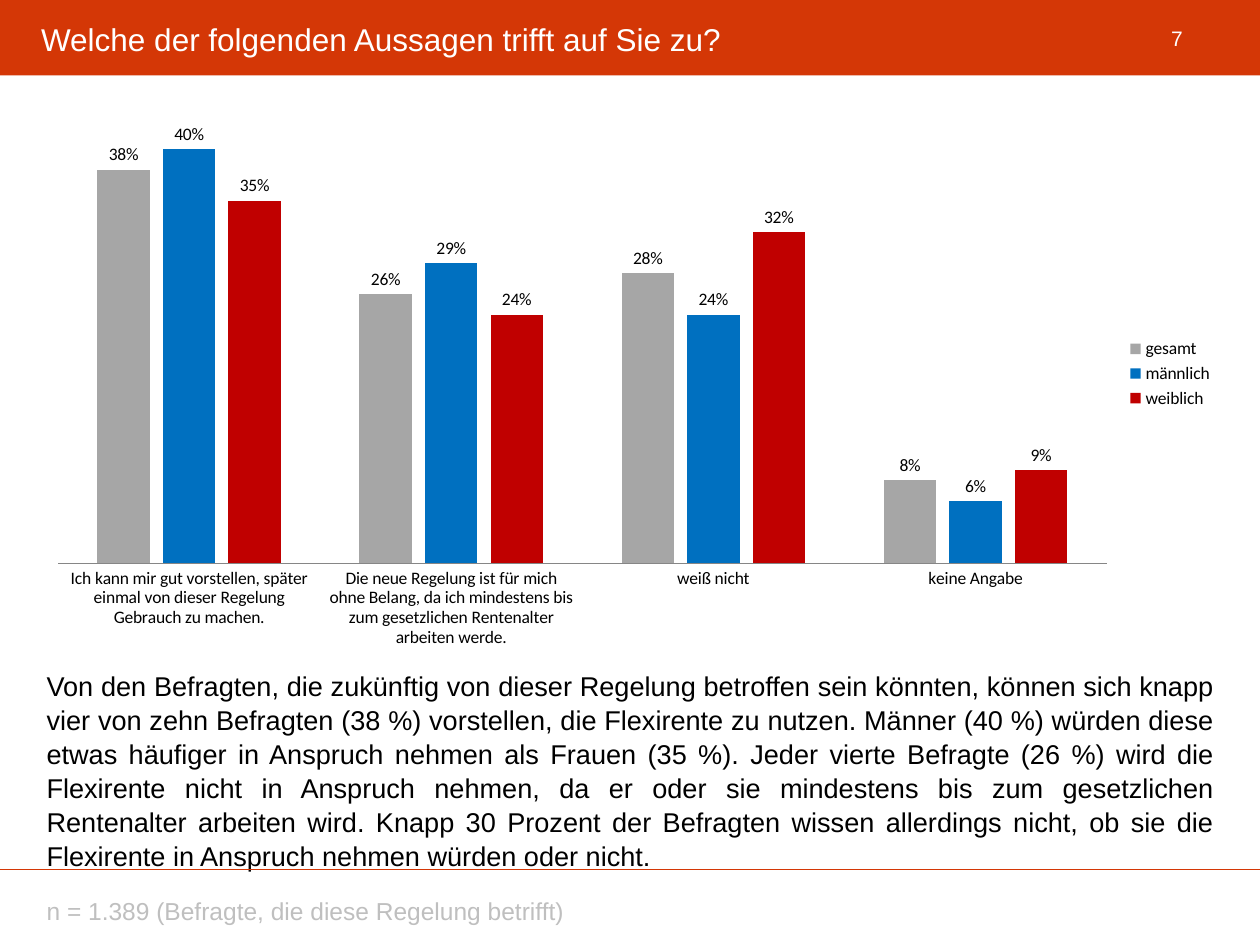
from lxml import etree
from pptx import Presentation
from pptx.chart.data import CategoryChartData
from pptx.dml.color import RGBColor
from pptx.enum.chart import XL_CHART_TYPE as ChartType, XL_LABEL_POSITION as LabelPos
from pptx.enum.chart import XL_LEGEND_POSITION as LegendPos, XL_TICK_MARK as TickMark
from pptx.enum.shapes import MSO_CONNECTOR as Connector, MSO_SHAPE as Shape
from pptx.enum.text import MSO_ANCHOR as Anchor, PP_ALIGN as Align
from pptx.oxml import parse_xml
from pptx.oxml.ns import nsdecls, qn
from pptx.util import Cm, Pt

WIDTH, HEIGHT = 25.4, 19.05
MARGIN = 0.69
CONTENT_W = WIDTH - 2 * MARGIN
RED, WHITE, BLACK, GREY = "D43706", "FFFFFF", "000000", "BFBFBF"
PERCENT = "###0%"

CATEGORIES = [
    "Ich kann mir gut vorstellen, später einmal von dieser Regelung Gebrauch zu machen.",
    "Die neue Regelung ist für mich ohne Belang, da ich mindestens bis zum "
    "gesetzlichen Rentenalter arbeiten werde.",
    "weiß nicht",
    "keine Angabe",
]
SERIES = [
    ("gesamt", "A6A6A6", (0.38, 0.26, 0.28, 0.08)),
    ("männlich", "0070C0", (0.40, 0.29, 0.24, 0.06)),
    ("weiblich", "C00000", (0.35, 0.24, 0.32, 0.09)),
]
COMMENT = (
    "Von den Befragten, die zukünftig von dieser Regelung betroffen sein könnten, "
    "können sich knapp vier von zehn Befragten (38 %) vorstellen, die Flexirente zu "
    "nutzen. Männer (40 %) würden diese etwas häufiger in Anspruch nehmen als Frauen "
    "(35 %). Jeder vierte Befragte (26 %) wird die Flexirente nicht in Anspruch nehmen, "
    "da er oder sie mindestens bis zum gesetzlichen Rentenalter arbeiten wird. Knapp 30 "
    "Prozent der Befragten wissen allerdings nicht, ob sie die Flexirente in Anspruch "
    "nehmen würden oder nicht."
)


def rgb(value):
    return RGBColor.from_string(value)


def add_text(slide, text, x, y, w, h, size=18, color=BLACK, align=Align.LEFT,
             anchor=Anchor.TOP, spacing=None):
    tf = slide.shapes.add_textbox(Cm(x), Cm(y), Cm(w), Cm(h)).text_frame
    tf.word_wrap = True
    tf.vertical_anchor = anchor
    p = tf.paragraphs[0]
    p.alignment = align
    p.line_spacing = spacing
    r = p.add_run()
    r.text = text
    r.font.name, r.font.size = "Arial", Pt(size)
    r.font.color.rgb = rgb(color)


def add_header(slide, x, y, w, h):
    band = slide.shapes.add_shape(Shape.RECTANGLE, Cm(x), Cm(y), Cm(w), Cm(h))
    band.shadow.inherit = False
    band.fill.solid()
    band.fill.fore_color.rgb = rgb(RED)
    band.line.fill.background()
    add_text(slide, "7", x + w - 2.69, y + 0.25, 2.03, 1.02, size=12, color=WHITE,
             align=Align.CENTER, anchor=Anchor.MIDDLE)
    add_text(slide, "Welche der folgenden Aussagen trifft auf Sie zu?",
             x + 0.58, y + 0.41, w - 1.24, 0.76, color=WHITE, anchor=Anchor.MIDDLE)


def add_footer(slide, x, y, w):
    rule = slide.shapes.add_connector(Connector.STRAIGHT, Cm(x), Cm(y), Cm(x + w), Cm(y))
    rule.line.color.rgb = rgb(RED)
    rule.line.width = Pt(0.75)
    etree.SubElement(rule._element.spPr, qn("a:effectLst"))
    add_text(slide, "n = 1.389 (Befragte, die diese Regelung betrifft)",
             x + MARGIN, y + 0.41, 20.6, 0.81, size=14, color=GREY)


def set_plot_area(chart, x, y, w, h):
    """Fix the inner plot area, in fractions of the chart."""
    plot_area = chart._chartSpace.chart.plotArea
    for old in plot_area.findall(qn("c:layout")):
        plot_area.remove(old)
    sizes = "".join(f'<c:{tag} val="{val}"/>'
                    for tag, val in zip("xywh", (x, y, w, h)))
    plot_area.insert(0, parse_xml(
        f'<c:layout {nsdecls("c")}><c:manualLayout><c:layoutTarget val="inner"/>'
        f'<c:xMode val="edge"/><c:yMode val="edge"/>{sizes}'
        '</c:manualLayout></c:layout>'))


def add_answer_chart(slide, x, y, w, h):
    data = CategoryChartData(number_format=PERCENT)
    data.categories = CATEGORIES
    for name, _, values in SERIES:
        data.add_series(name, values)
    chart = slide.shapes.add_chart(ChartType.COLUMN_CLUSTERED, Cm(x), Cm(y), Cm(w), Cm(h),
                                   data).chart
    chart.has_title = False
    chart.font.name, chart.font.size = "Calibri", Pt(10)
    chart.font.color.rgb = rgb(BLACK)
    chart.has_legend = True
    chart.legend.position = LegendPos.RIGHT
    chart.legend.include_in_layout = False

    axis = chart.category_axis
    axis.major_tick_mark = TickMark.NONE
    axis.format.line.color.rgb = rgb("868686")
    axis.format.line.width = Pt(0.75)
    scale = chart.value_axis
    scale.visible = False
    scale.has_major_gridlines = False
    scale.minimum_scale, scale.maximum_scale = 0, 0.45
    scale.tick_labels.number_format = PERCENT
    scale.tick_labels.number_format_is_linked = False

    plot = chart.plots[0]
    plot.gap_width, plot.overlap = 150, -25
    plot.vary_by_categories = False
    for series, (_, color, _) in zip(plot.series, SERIES):
        series.invert_if_negative = False
        series.format.fill.solid()
        series.format.fill.fore_color.rgb = rgb(color)
        labels = series.data_labels
        labels.show_value = True
        labels.number_format = PERCENT
        labels.number_format_is_linked = False
        labels.position = LabelPos.OUTSIDE_END
    set_plot_area(chart, 0.02, 0.02, 0.88, 0.81)


def main():
    prs = Presentation()
    prs.slide_width, prs.slide_height = Cm(WIDTH), Cm(HEIGHT)
    slide = prs.slides.add_slide(prs.slide_layouts[6])
    add_header(slide, 0, 0, WIDTH, 1.52)
    add_answer_chart(slide, MARGIN, 1.73, CONTENT_W, 11.6)
    add_text(slide, COMMENT, MARGIN, 13.33, CONTENT_W, 3.81, size=15.5,
             align=Align.JUSTIFY, spacing=1.05)
    add_footer(slide, 0, 17.53, WIDTH)
    prs.save("out.pptx")


if __name__ == "__main__":
    main()
